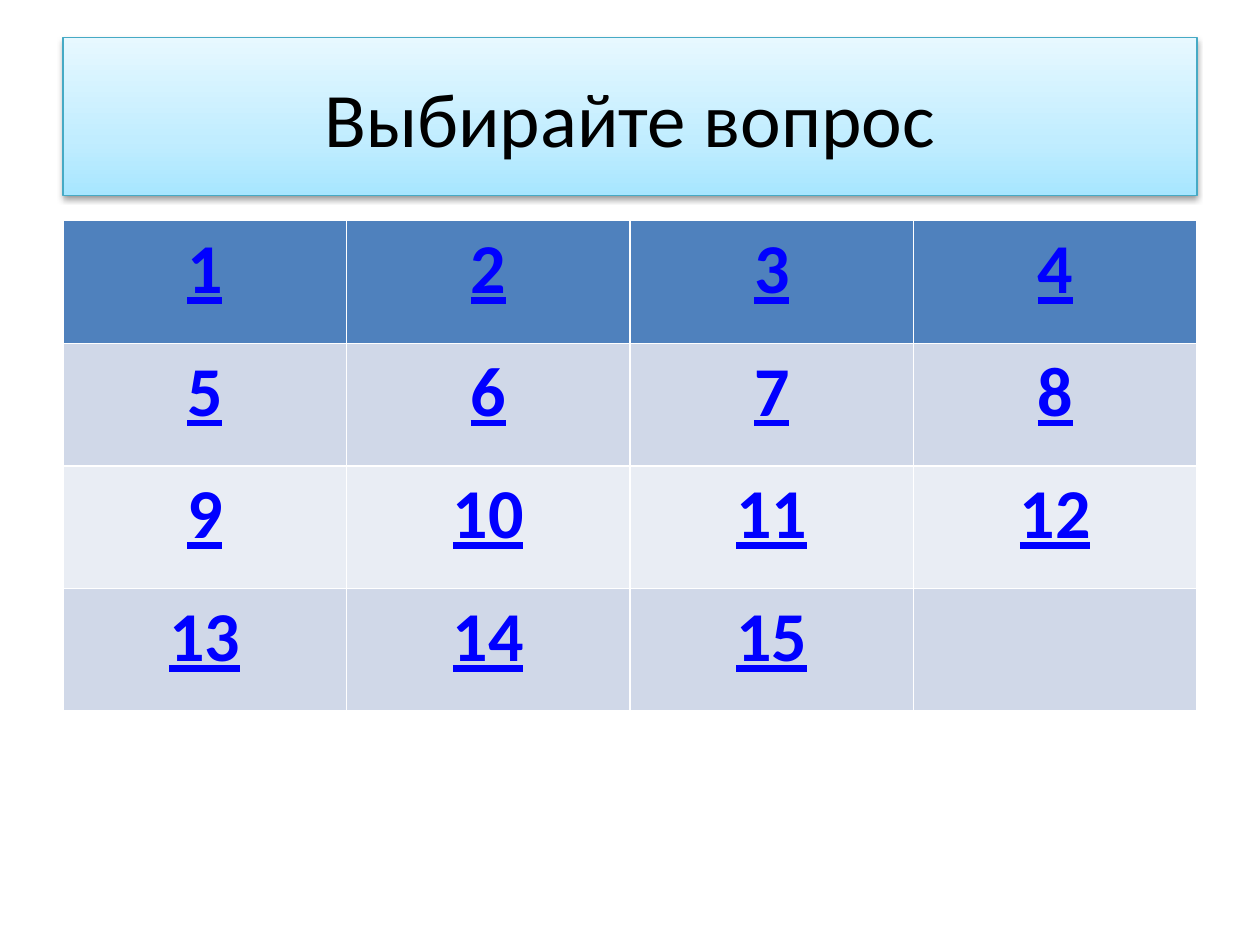
"""Build a quiz slide with a title banner and a grid of question numbers."""
from copy import deepcopy

from lxml.etree import SubElement
from pptx import Presentation
from pptx.dml.color import RGBColor
from pptx.enum.shapes import MSO_SHAPE as Shape
from pptx.enum.text import MSO_ANCHOR as Anchor, PP_ALIGN as Align
from pptx.oxml.ns import qn
from pptx.util import Cm, Pt

TITLE = "Выбирайте вопрос"
QUESTIONS = [
    ["1", "2", "3", "4"],
    ["5", "6", "7", "8"],
    ["9", "10", "11", "12"],
    ["13", "14", "15", ""],
]

FONT = "Calibri"
BLACK = RGBColor(0x00, 0x00, 0x00)
LINK_BLUE = RGBColor(0x00, 0x00, 0xFF)
TEAL = RGBColor(0x46, 0xAA, 0xC5)
HEADER = RGBColor(0x4F, 0x81, 0xBD)
BANDS = [RGBColor(0xE9, 0xED, 0xF4), RGBColor(0xD0, 0xD8, 0xE8)]
GRADIENT = [
    (0, RGBColor(0xA7, 0xE6, 0xFF)),
    (0.35, RGBColor(0xC1, 0xED, 0xFF)),
    (1, RGBColor(0xE7, 0xF8, 0xFF)),
]

LEFT, WIDTH = Cm(1.27), Cm(22.86)
BANNER_TOP, BANNER_HEIGHT = Cm(0.76), Cm(3.18)
GRID_TOP, ROW_HEIGHT = Cm(4.45), Cm(2.47)


def write(paragraph, text, size, color):
    paragraph.text = text
    paragraph.alignment = Align.CENTER
    paragraph.font.name = FONT
    paragraph.font.size = Pt(size)
    paragraph.font.color.rgb = color


def paint_gradient(shape):
    shape.fill.gradient()
    shape.fill.gradient_angle = 90
    stop_list = shape._element.spPr.find(".//" + qn("a:gsLst"))
    stop_list.append(deepcopy(stop_list[0]))
    for stop, (position, color) in zip(shape.fill.gradient_stops, GRADIENT):
        stop.position = position
        stop.color.rgb = color


def add_shadow(shape):
    shape.shadow.inherit = False
    effects = shape._element.spPr.find(qn("a:effectLst"))
    shadow = SubElement(effects, qn("a:outerShdw"), blurRad=str(Pt(3.1)),
                        dist=str(Pt(1.6)), dir="5400000", rotWithShape="0")
    color = SubElement(shadow, qn("a:srgbClr"), val=str(BLACK))
    SubElement(color, qn("a:alpha"), val="38000")


def add_banner(page):
    banner = page.shapes.add_shape(Shape.RECTANGLE, LEFT, BANNER_TOP, WIDTH, BANNER_HEIGHT)
    paint_gradient(banner)
    banner.line.color.rgb = TEAL
    banner.line.width = Pt(0.75)
    add_shadow(banner)
    banner.text_frame.vertical_anchor = Anchor.MIDDLE
    write(banner.text_frame.paragraphs[0], TITLE, 44, BLACK)


def add_grid(page):
    rows, columns = len(QUESTIONS), len(QUESTIONS[0])
    grid = page.shapes.add_table(rows, columns, LEFT, GRID_TOP, WIDTH, ROW_HEIGHT * rows).table
    for row, numbers in enumerate(QUESTIONS):
        for column, number in enumerate(numbers):
            cell = grid.cell(row, column)
            cell.fill.solid()
            cell.fill.fore_color.rgb = BANDS[row % 2] if row else HEADER
            paragraph = cell.text_frame.paragraphs[0]
            write(paragraph, number, 40, LINK_BLUE)
            paragraph.font.bold = True
            paragraph.font.underline = True


def main():
    deck = Presentation()
    deck.slide_width, deck.slide_height = Cm(25.4), Cm(19.05)
    page = deck.slides.add_slide(deck.slide_layouts[6])
    add_banner(page)
    add_grid(page)
    deck.save("out.pptx")


if __name__ == "__main__":
    main()
